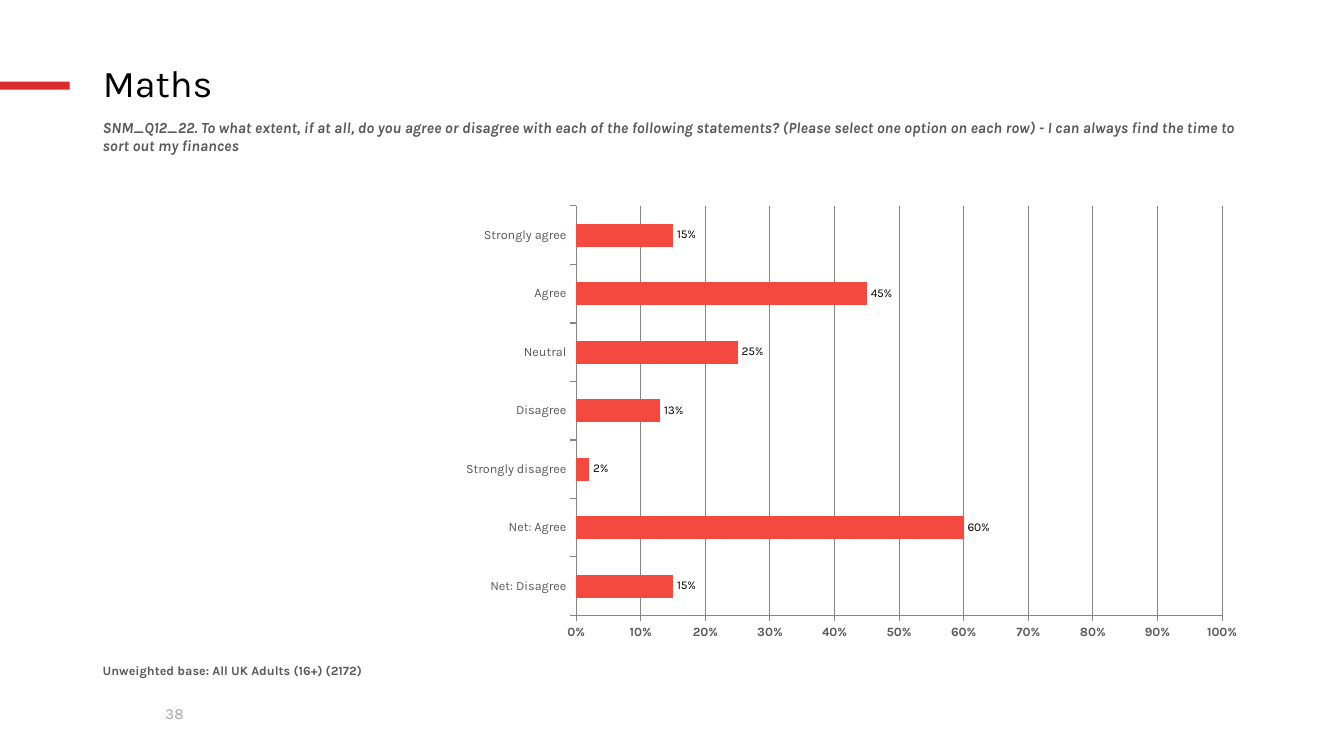
from lxml import etree
from pptx import Presentation
from pptx.chart.data import CategoryChartData
from pptx.dml.color import RGBColor
from pptx.enum import chart as ch, shapes, text
from pptx.oxml import ns
from pptx.util import Inches, Pt

FONT = "Karla"
COLOURS = {
    "accent": "DA2C2D",
    "bar": "F3493E",
    "title": "000000",
    "body": "595959",
    "number": "A6A6A6",
    "grid": "868686",
}
LEFT, WIDTH = 0.92, 11.5
ANSWERS = {
    "Net: Disagree": 0.15,
    "Net: Agree": 0.6,
    "Strongly disagree": 0.02,
    "Disagree": 0.13,
    "Neutral": 0.25,
    "Agree": 0.45,
    "Strongly agree": 0.15,
}
PLOT_AREA = {"x": 0.417, "y": 0.034, "w": 0.557, "h": 0.897}


def colour(name):
    return RGBColor.from_string(COLOURS[name])


def style_font(font, size, name, bold=False, italic=False):
    font.name = FONT
    font.size = Pt(size)
    font.color.rgb = colour(name)
    font.bold = bold
    font.italic = italic


def add_accent(page):
    bar = page.shapes.add_shape(
        shapes.MSO_SHAPE.RECTANGLE, 0, Inches(0.81), Inches(0.69), Inches(0.08))
    bar.shadow.inherit = False
    bar.fill.solid()
    bar.fill.fore_color.rgb = colour("accent")
    bar.line.fill.background()


def add_title(page, words):
    title = page.shapes.title
    title.left, title.top = Inches(LEFT), Inches(0.59)
    title.width, title.height = Inches(WIDTH), Inches(0.51)
    title.text_frame.vertical_anchor = text.MSO_ANCHOR.MIDDLE
    para = title.text_frame.paragraphs[0]
    para.alignment = text.PP_ALIGN.LEFT
    para.line_spacing = 0.9
    span = para.add_run()
    span.text = words
    style_font(span.font, 27, "title")


def add_text(page, words, left, top, width, height, size, name="body", **style):
    box = page.shapes.add_textbox(
        Inches(left), Inches(top), Inches(width), Inches(height))
    box.text_frame.word_wrap = True
    span = box.text_frame.paragraphs[0].add_run()
    span.text = words
    style_font(span.font, size, name, **style)


def place_plot(chart):
    """Fix the inner plot area as fractions of the chart frame."""
    plot_area = chart.plots[0]._element.getparent()
    for old in plot_area.findall(ns.qn("c:layout")):
        plot_area.remove(old)
    layout = etree.Element(ns.qn("c:layout"))
    manual = etree.SubElement(layout, ns.qn("c:manualLayout"))
    settings = {"layoutTarget": "inner", "xMode": "edge", "yMode": "edge", **PLOT_AREA}
    for tag, value in settings.items():
        etree.SubElement(manual, ns.qn(f"c:{tag}")).set("val", str(value))
    plot_area.insert(0, layout)


def style_axis(axis, bold=False):
    axis.tick_label_position = ch.XL_TICK_LABEL_POSITION.LOW
    axis.major_tick_mark = ch.XL_TICK_MARK.OUTSIDE
    axis.minor_tick_mark = ch.XL_TICK_MARK.NONE
    style_font(axis.tick_labels.font, 9, "body", bold)
    style_line(axis.format.line)


def style_line(line):
    line.color.rgb = colour("grid")
    line.width = Pt(0.75)


def add_answer_chart(page):
    data = CategoryChartData(number_format="0%")
    data.categories = list(ANSWERS)
    data.add_series("Series 1", list(ANSWERS.values()))
    chart = page.shapes.add_chart(
        ch.XL_CHART_TYPE.BAR_CLUSTERED, Inches(LEFT), Inches(1.89),
        Inches(WIDTH), Inches(4.53), data).chart
    style_font(chart.font, 18, "title")
    chart.has_legend = False
    chart.has_title = False
    place_plot(chart)

    style_axis(chart.category_axis)
    chart.category_axis.has_major_gridlines = False
    scale = chart.value_axis
    style_axis(scale, bold=True)
    scale.minimum_scale, scale.maximum_scale, scale.major_unit = 0, 1, 0.1
    scale.has_major_gridlines = True
    style_line(scale.major_gridlines.format.line)
    scale.tick_labels.number_format = "0%"
    scale.tick_labels.number_format_is_linked = False

    plot = chart.plots[0]
    plot.vary_by_categories = False
    plot.gap_width, plot.overlap = 150, -10
    bars = plot.series[0]
    bars.format.fill.solid()
    bars.format.fill.fore_color.rgb = colour("bar")
    labels = bars.data_labels
    labels.show_value = True
    labels.position = ch.XL_LABEL_POSITION.OUTSIDE_END
    labels.number_format = "0%"
    labels.number_format_is_linked = False
    style_font(labels.font, 8.5, "title")


def main():
    deck = Presentation()
    deck.slide_width, deck.slide_height = Inches(13.33), Inches(7.5)
    page = deck.slides.add_slide(deck.slide_layouts[5])
    add_accent(page)
    add_text(page, "38", 1.54, 6.94, 0.68, 0.29, 11, "number")
    add_title(page, "Maths")
    add_text(
        page,
        "SNM_Q12_22. To what extent, if at all, do you agree or disagree with each of "
        "the following statements? (Please select one option on each row) - I can "
        "always find the time to sort out my finances",
        LEFT, 1.12, WIDTH, 0.66, 11, bold=True, italic=True)
    add_text(page, "Unweighted base: All UK Adults (16+) (2172)",
             LEFT, 6.53, WIDTH, 0.43, 9, bold=True)
    add_answer_chart(page)
    deck.save("out.pptx")


if __name__ == "__main__":
    main()
